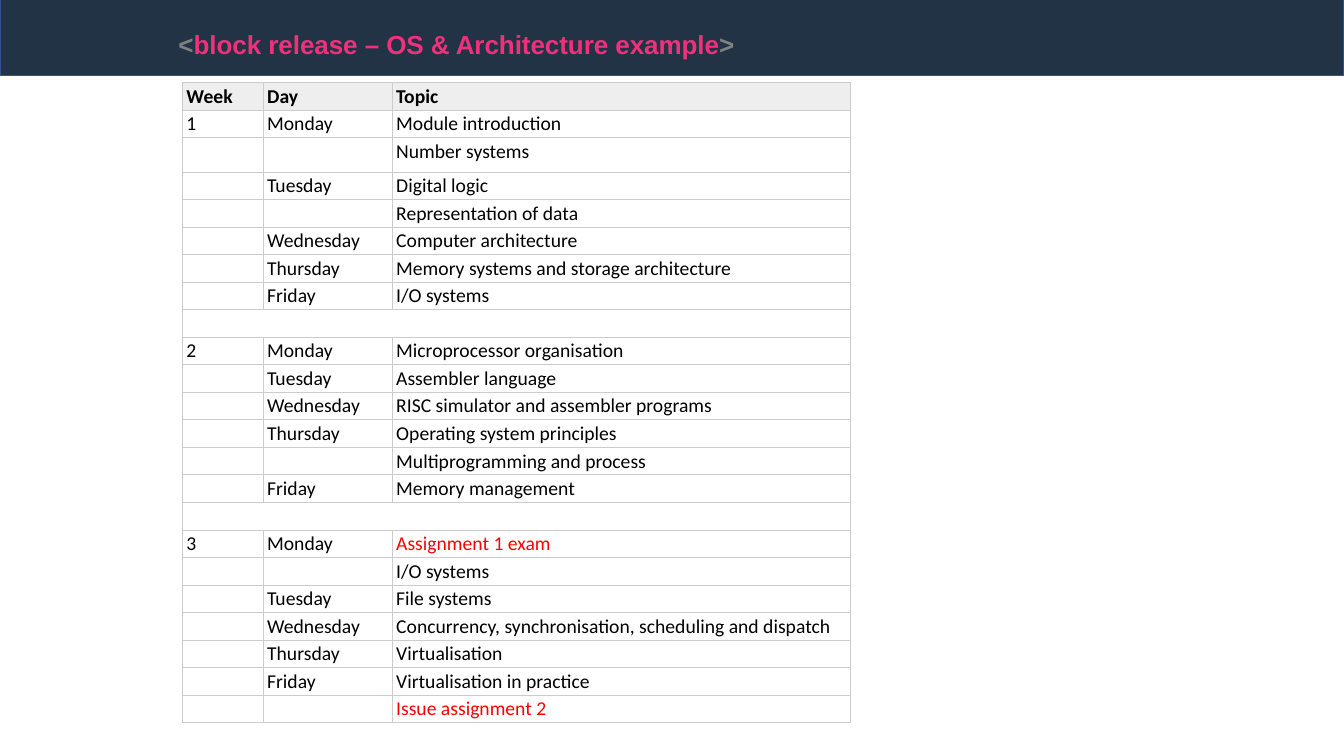
from lxml import etree
from pptx import Presentation
from pptx.dml.color import RGBColor
from pptx.enum.shapes import MSO_SHAPE
from pptx.enum.text import MSO_ANCHOR, MSO_AUTO_SIZE, PP_ALIGN
from pptx.oxml.ns import qn
from pptx.util import Inches, Pt

RECTANGLE = MSO_SHAPE.RECTANGLE
TOP, LEFT = MSO_ANCHOR.TOP, PP_ALIGN.LEFT
FIT_SHAPE = MSO_AUTO_SIZE.SHAPE_TO_FIT_TEXT
TITLE_ONLY = 5

COLOURS = {
    "band": "223346", "band_edge": "325491", "bracket": "808080",
    "heading": "F1307C", "header": "EEEEEE", "grid": "CCCCCC",
    "text": "000000", "assessment": "FF0000",
}
HEADING = [
    ("<", "bracket"),
    ("block release – OS & Architecture example", "heading"),
    (">", "bracket"),
]
HEADER = ("Week", "Day", "Topic")
WEEKS = [
    [("Monday", "Module introduction"),
     ("", "Number systems"),
     ("Tuesday", "Digital logic"),
     ("", "Representation of data"),
     ("Wednesday", "Computer architecture"),
     ("Thursday", "Memory systems and storage architecture"),
     ("Friday", "I/O systems")],
    [("Monday", "Microprocessor organisation"),
     ("Tuesday", "Assembler language"),
     ("Wednesday", "RISC simulator and assembler programs"),
     ("Thursday", "Operating system principles"),
     ("", "Multiprogramming and process"),
     ("Friday", "Memory management")],
    [("Monday", "Assignment 1 exam"),
     ("", "I/O systems"),
     ("Tuesday", "File systems"),
     ("Wednesday", "Concurrency, synchronisation, scheduling and dispatch"),
     ("Thursday", "Virtualisation"),
     ("Friday", "Virtualisation in practice"),
     ("", "Issue assignment 2")],
]
ASSESSMENTS = {"Assignment 1 exam", "Issue assignment 2"}
COLUMN_WIDTHS = (0.8, 1.28, 4.55)
ROW_HEIGHT, TALL_ROW_HEIGHT, TALL_ROW = 0.24, 0.34, 2
CELL_FORMAT = {
    "margin_left": Inches(0.04), "margin_right": Inches(0.04),
    "margin_top": Inches(0.02), "margin_bottom": Inches(0.02),
    "vertical_anchor": TOP,
}


def colour(name):
    return RGBColor.from_string(COLOURS[name])


def apply(target, values):
    for attribute, value in values.items():
        setattr(target, attribute, value)


def add_heading(slide, left, top, width, height):
    heading = slide.shapes.title
    apply(heading, {"left": left, "top": top, "width": width, "height": height})
    frame = heading.text_frame
    apply(frame, {"word_wrap": False, "auto_size": FIT_SHAPE, "vertical_anchor": TOP})
    line = frame.paragraphs[0]
    line.alignment = LEFT
    for text, colour_name in HEADING:
        run = line.add_run()
        run.text = text
        apply(run.font, {"name": "Arial", "size": Pt(32), "bold": True})
        run.font.color.rgb = colour(colour_name)
        run._r.get_or_add_rPr().set("baseline", "30000")


def add_band(slide, left, top, width, height):
    band = slide.shapes.add_shape(RECTANGLE, left, top, width, height)
    band.shadow.inherit = False
    band.fill.solid()
    band.fill.fore_color.rgb = colour("band")
    band.line.color.rgb = colour("band_edge")
    band.line.width = Pt(1)
    slide.shapes.title.element.addprevious(band.element)


def add_borders(cell):
    properties = cell._tc.get_or_add_tcPr()
    for side in ("lnL", "lnR", "lnT", "lnB"):
        border = etree.SubElement(properties, qn(f"a:{side}"), w=str(Pt(0.75)))
        fill = etree.SubElement(border, qn("a:solidFill"))
        etree.SubElement(fill, qn("a:srgbClr"), val=COLOURS["grid"])


def fill_cell(cell, text, is_header):
    add_borders(cell)
    apply(cell, CELL_FORMAT)
    if is_header:
        cell.fill.solid()
        cell.fill.fore_color.rgb = colour("header")
    else:
        cell.fill.background()
    paragraph = cell.text_frame.paragraphs[0]
    if not text:
        etree.SubElement(paragraph._p, qn("a:endParaRPr"), sz="1400")
        return
    run = paragraph.add_run()
    run.text = text
    apply(run.font, {"name": "Calibri", "size": Pt(14), "bold": is_header})
    run.font.color.rgb = colour("assessment" if text in ASSESSMENTS else "text")


def schedule_rows():
    rows = [HEADER]
    for number, sessions in enumerate(WEEKS, 1):
        if number > 1:
            rows.append(("", "", ""))
        for index, (day, topic) in enumerate(sessions):
            rows.append(("" if index else str(number), day, topic))
    return rows


def add_schedule(slide, left, top, width, height):
    rows = schedule_rows()
    schedule = slide.shapes.add_table(
        len(rows), len(HEADER), left, top, width, height).table
    apply(schedule, {"first_row": False, "horz_banding": False})
    for column, column_width in zip(schedule.columns, COLUMN_WIDTHS):
        column.width = Inches(column_width)
    for index, texts in enumerate(rows):
        row_height = TALL_ROW_HEIGHT if index == TALL_ROW else ROW_HEIGHT
        schedule.rows[index].height = Inches(row_height)
        if not any(texts):
            schedule.cell(index, 0).merge(schedule.cell(index, len(HEADER) - 1))
        for position, text in enumerate(texts):
            fill_cell(schedule.cell(index, position), text, index == 0)


def main():
    deck = Presentation()
    apply(deck, {"slide_width": Inches(13.33), "slide_height": Inches(7.5)})
    slide = deck.slides.add_slide(deck.slide_layouts[TITLE_ONLY])
    add_heading(slide, Inches(1.67), Inches(0.18), Inches(5.73), Inches(0.64))
    add_band(slide, 0, Inches(-0.03), deck.slide_width, Inches(0.78))
    add_schedule(slide, Inches(1.81), Inches(0.82), Inches(6.63), Inches(6.41))
    deck.save("out.pptx")


if __name__ == "__main__":
    main()
